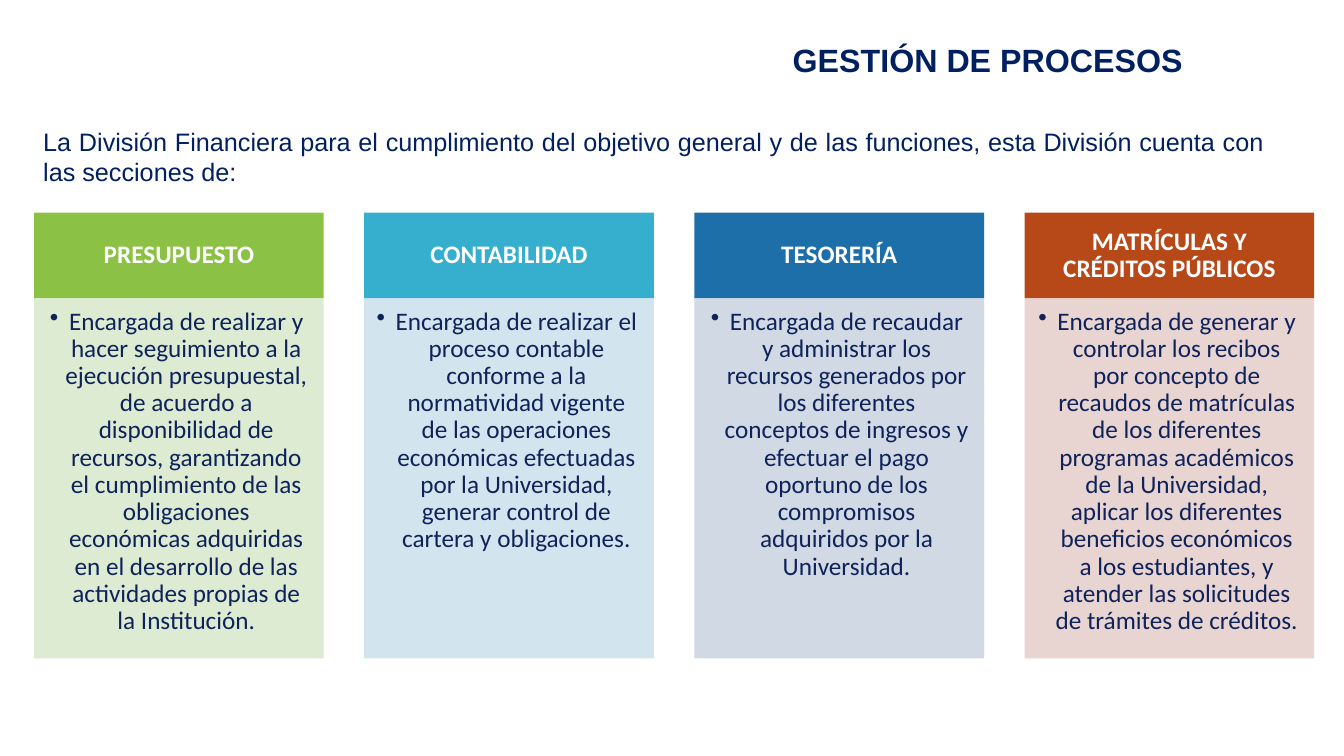
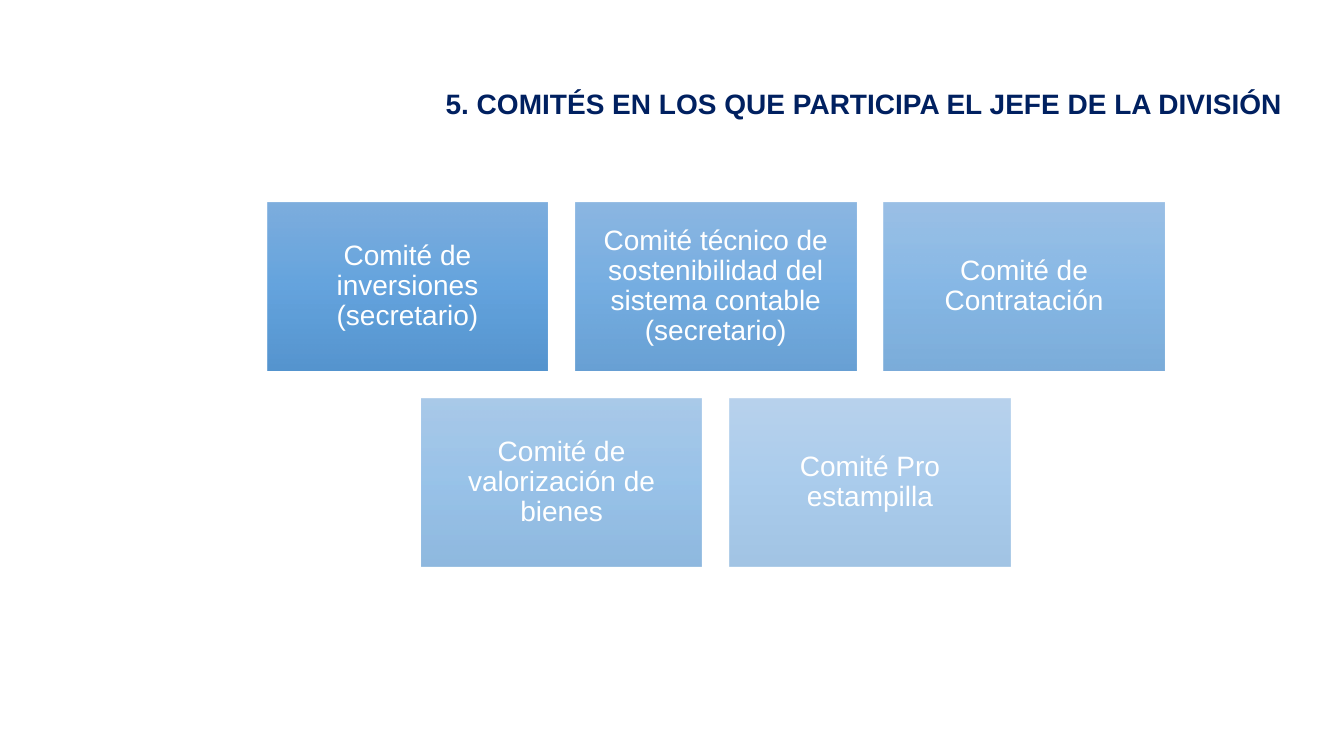
from lxml.etree import SubElement
from pptx import Presentation
from pptx.dml.color import RGBColor
from pptx.enum.shapes import MSO_SHAPE as Preset
from pptx.enum.text import MSO_ANCHOR as Anchor, MSO_AUTO_SIZE as AutoSize, PP_ALIGN as Align
from pptx.oxml.ns import qn
from pptx.util import Cm, Pt

COLORS = {"navy": "002060", "ink": "0F235A", "white": "FFFFFF"}

PROCESS_TITLE = "GESTIÓN DE PROCESOS"
INTRO = (
    "La División Financiera para el cumplimiento del objetivo general y de las funciones, "
    "esta División cuenta con las secciones de:"
)
SECTIONS = [
    ("PRESUPUESTO", "8BC145", "DAE9CF",
     "Encargada de realizar y hacer seguimiento a la ejecución presupuestal, de acuerdo a "
     "disponibilidad de recursos, garantizando el cumplimiento de las obligaciones económicas "
     "adquiridas en el desarrollo de las actividades propias de la Institución."),
    ("CONTABILIDAD", "36AFCE", "CEE3ED",
     "Encargada de realizar el proceso contable conforme a la normatividad vigente de las "
     "operaciones económicas efectuadas por la Universidad, generar control de cartera y "
     "obligaciones."),
    ("TESORERÍA", "1D6FA9", "CDD5E2",
     "Encargada de recaudar y administrar los recursos generados por los diferentes conceptos "
     "de ingresos y efectuar el pago oportuno de los compromisos adquiridos por la Universidad."),
    ("MATRÍCULAS Y CRÉDITOS PÚBLICOS", "B74919", "E6D0CC",
     "Encargada de generar y controlar los recibos por concepto de recaudos de matrículas de los "
     "diferentes programas académicos de la Universidad, aplicar los diferentes beneficios "
     "económicos a los estudiantes, y atender las solicitudes de trámites de créditos."),
]

COMMITTEE_TITLE = "5. COMITÉS EN LOS QUE PARTICIPA EL JEFE DE LA DIVISIÓN"
COMMITTEE_ROWS = [
    ["Comité de inversiones (secretario)",
     "Comité técnico de sostenibilidad del sistema contable (secretario)",
     "Comité de Contratación"],
    ["Comité de valorización de bienes", "Comité Pro estampilla"],
]
TILE_STOPS = [(0, "71A6DB"), (50, "559BDB"), (100, "448ACA")]


def set_alpha(color_element, percent):
    SubElement(color_element, qn("a:alpha"), val=str(percent * 1000))


def write(frame, text, size, color, font="Arial", bold=False, align=Align.CENTER,
          anchor=Anchor.MIDDLE, insets=(0.25, 0.13, 0.25, 0.13), wrap=True):
    frame.auto_size = AutoSize.NONE
    frame.word_wrap = wrap
    frame.vertical_anchor = anchor
    frame.margin_left, frame.margin_top, frame.margin_right, frame.margin_bottom = map(Cm, insets)
    paragraph = frame.paragraphs[0]
    paragraph.text = text
    paragraph.alignment = align
    paragraph.font.name = font
    paragraph.font.size = Pt(size)
    paragraph.font.bold = bold
    paragraph.font.color.rgb = RGBColor.from_string(color)
    return paragraph


def hang(paragraph, indent, bullet=None):
    properties = paragraph._p.get_or_add_pPr()
    properties.set("marL", str(Cm(indent)))
    properties.set("indent", str(-Cm(indent)))
    if bullet:
        mark = SubElement(properties, qn("a:buChar"), char=bullet)
        properties.remove(mark)
        properties.insert_element_before(mark, "a:tabLst", "a:defRPr", "a:extLst")


def add_titled_slide(deck, title, box, size, **style):
    slide = deck.slides.add_slide(deck.slide_layouts[5])
    heading = slide.shapes.title
    heading.left, heading.top, heading.width, heading.height = map(Cm, box)
    return slide, write(heading.text_frame, title, size, COLORS["navy"], bold=True, **style)


def add_block(slide, box):
    block = slide.shapes.add_shape(Preset.RECTANGLE, *map(Cm, box))
    block.shadow.inherit = False
    block.line.fill.background()
    return block


def fill_solid(block, color, opacity=100):
    block.fill.solid()
    block.fill.fore_color.rgb = RGBColor.from_string(color)
    if opacity < 100:
        set_alpha(block._element.spPr.find(".//" + qn("a:srgbClr")), opacity)


def fill_gradient(block, opacity):
    block.fill.gradient()
    block.fill.gradient_angle = 270
    stops = block._element.spPr.find(".//" + qn("a:gsLst"))
    for stop in list(stops):
        stops.remove(stop)
    for position, color in TILE_STOPS:
        stop = SubElement(stops, qn("a:gs"), pos=str(position * 1000))
        set_alpha(SubElement(stop, qn("a:srgbClr"), val=color), opacity)


def add_processes(deck):
    slide, _ = add_titled_slide(deck, PROCESS_TITLE, (19.68, 0.89, 10.44, 1.24), 23, wrap=False)
    intro = slide.shapes.add_textbox(Cm(0.84), Cm(3.05), Cm(31.27), Cm(1.8))
    write(intro.text_frame, INTRO, 18, COLORS["navy"], align=Align.JUSTIFY, anchor=Anchor.TOP)

    left, top, width, pitch = 0.86, 5.36, 7.3, 8.32
    header_height, duty_height = 2.16, 9.07
    for index, (name, strong, pale, duty) in enumerate(SECTIONS):
        x = left + index * pitch
        header = add_block(slide, (x, top, width, header_height))
        fill_solid(header, strong)
        label = write(header.text_frame, name, 18, COLORS["white"], "Calibri", True,
                      insets=(0.36, 0.2, 0.36, 0.2))
        label.line_spacing = 0.9

        panel = add_block(slide, (x, top + header_height, width, duty_height))
        fill_solid(panel, pale, 90)
        task = panel.text_frame.paragraphs[0]
        task.level = 1
        hang(task, 0.48, "•")
        write(panel.text_frame, duty, 18, COLORS["ink"], "Calibri", anchor=Anchor.TOP,
              insets=(0.25, 0.25, 0.36, 0.41))
        task.line_spacing = 0.9


def add_committees(deck):
    slide, heading = add_titled_slide(deck, COMMITTEE_TITLE, (11.23, 1.96, 22.6, 1.02), 20,
                                      align=Align.LEFT, insets=(0, 0, 0, 0))
    hang(heading, 0.99)
    heading.line_spacing = Pt(32)

    center, top, width, height, gap = 18.04, 5.1, 7.07, 4.24, 0.7
    opacity = 90
    for row, names in enumerate(COMMITTEE_ROWS):
        left = center - (len(names) * (width + gap) - gap) / 2
        for column, name in enumerate(names):
            tile = add_block(slide, (left + column * (width + gap), top + row * (height + gap),
                                     width, height))
            fill_gradient(tile, opacity)
            label = write(tile.text_frame, name, 20, COLORS["white"], insets=(0.2, 0.2, 0.2, 0.2))
            label.line_spacing = 0.9
            opacity -= 10


def main():
    deck = Presentation()
    deck.slide_width, deck.slide_height = Cm(33.87), Cm(19.05)
    add_processes(deck)
    add_committees(deck)
    deck.save("out.pptx")


if __name__ == "__main__":
    main()
